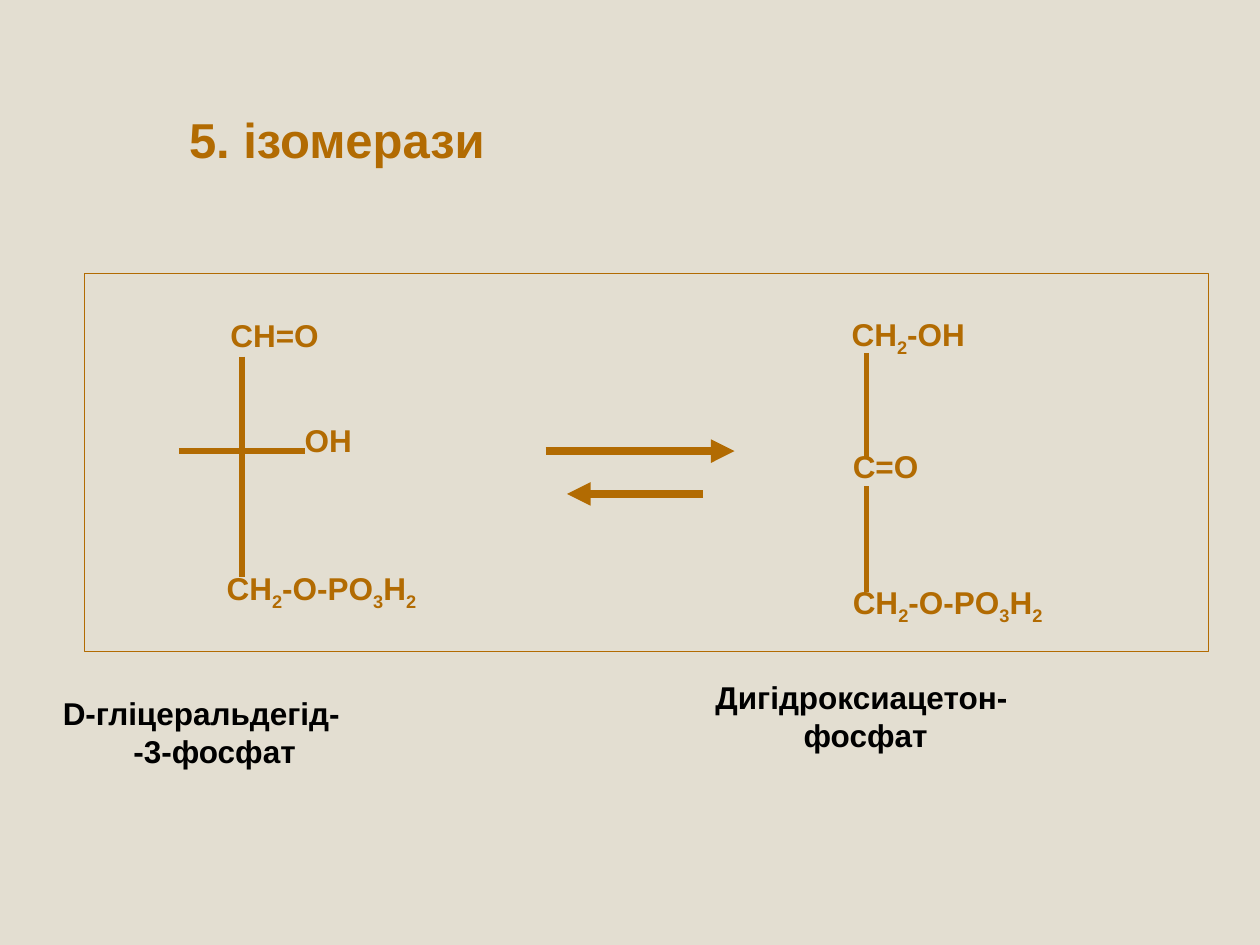
"""Build the slide on isomerases with its reversible reaction scheme."""
from dataclasses import dataclass
from itertools import groupby

from lxml import etree
from pptx import Presentation
from pptx.dml.color import RGBColor
from pptx.enum.shapes import MSO_CONNECTOR, MSO_SHAPE
from pptx.enum.text import MSO_ANCHOR, MSO_AUTO_SIZE, PP_ALIGN
from pptx.oxml.ns import qn
from pptx.util import Inches, Pt

STRAIGHT = MSO_CONNECTOR.STRAIGHT
RECTANGLE = MSO_SHAPE.RECTANGLE
TOP = MSO_ANCHOR.TOP
NO_AUTOFIT = MSO_AUTO_SIZE.NONE
LEFT = PP_ALIGN.LEFT

FONT = "Arial"
BACKGROUND = "E3DED1"
ACCENT = "B26B02"
BLACK = "000000"
TITLE_SIZE = 28
TEXT_SIZE = 18
BOND_WIDTH = 3
ARROW_WIDTH = 4.5
LEFT_CHAIN = 1.92
RIGHT_CHAIN = 6.88


@dataclass(frozen=True)
class Group:
    formula: str
    left: float
    top: float
    width: float


@dataclass(frozen=True)
class Line:
    x1: float
    y1: float
    x2: float
    y2: float
    is_arrow: bool = False


@dataclass(frozen=True)
class Caption:
    first: str
    second: str
    left: float
    top: float
    indent: float


GROUPS = (
    Group("CH=O", 1.73, 2.46, 1.14),
    Group("OH", 2.32, 3.29, 0.7),
    Group("CH2-O-PO3H2", 1.7, 4.47, 2.26),
    Group("CH2-OH", 6.66, 2.45, 1.42),
    Group("C=O", 6.67, 3.5, 0.9),
    Group("CH2-O-PO3H2", 6.67, 4.58, 2.26),
)
LINES = (
    Line(LEFT_CHAIN, 2.83, LEFT_CHAIN, 4.58),
    Line(LEFT_CHAIN - 0.5, 3.58, LEFT_CHAIN + 0.5, 3.58),
    Line(RIGHT_CHAIN, 2.8, RIGHT_CHAIN, 3.64),
    Line(RIGHT_CHAIN, 3.86, RIGHT_CHAIN, 4.7),
    Line(4.33, 3.58, 5.83, 3.58, True),
    Line(5.58, 3.92, 4.5, 3.92, True),
)
CAPTIONS = (
    Caption("D-гліцеральдегід-", "-3-фосфат", 0.4, 5.46, 0.56),
    Caption("Дигідроксиацетон-", "фосфат", 5.58, 5.33, 0.7),
)


def rgb(value: str) -> RGBColor:
    """Turn a hex string into a colour."""
    return RGBColor.from_string(value)


def add_span(para, text: str, size: float, color: str):
    """Add one bold run to a paragraph."""
    span = para.add_run()
    span.text = text
    span.font.name = FONT
    span.font.size = Pt(size)
    span.font.bold = True
    span.font.color.rgb = rgb(color)
    return span


def add_box(page, left: float, top: float, width: float, height: float):
    """Add a wrapping text box and return its text frame."""
    box = page.shapes.add_textbox(
        Inches(left), Inches(top), Inches(width), Inches(height))
    box.text_frame.word_wrap = True
    return box.text_frame


def write_title(page, text: str) -> None:
    """Place and format the title placeholder."""
    title = page.shapes.title
    title.left, title.top = Inches(1.4), Inches(0.82)
    title.width, title.height = Inches(2.7), Inches(0.57)
    frame = title.text_frame
    frame.word_wrap = True
    frame.auto_size = NO_AUTOFIT
    frame.vertical_anchor = TOP
    para = frame.paragraphs[0]
    para.alignment = LEFT
    add_span(para, text, TITLE_SIZE, ACCENT)


def draw_group(page, group: Group) -> None:
    """Write a chemical group with its digits as subscripts."""
    frame = add_box(page, group.left, group.top, group.width, 0.5)
    for is_index, letters in groupby(group.formula, str.isdigit):
        span = add_span(frame.paragraphs[0], "".join(letters), TEXT_SIZE, ACCENT)
        if is_index:
            span.font._element.set("baseline", "-25000")


def draw_line(page, line: Line) -> None:
    """Draw a bond or a reaction arrow."""
    connector = page.shapes.add_connector(
        STRAIGHT, Inches(line.x1), Inches(line.y1), Inches(line.x2), Inches(line.y2))
    connector.line.color.rgb = rgb(ACCENT)
    connector.line.width = Pt(ARROW_WIDTH if line.is_arrow else BOND_WIDTH)
    if line.is_arrow:
        outline = connector.line._get_or_add_ln()
        etree.SubElement(outline, qn("a:tailEnd"), type="triangle")
    etree.SubElement(connector._element.spPr, qn("a:effectLst"))


def draw_caption(page, caption: Caption) -> None:
    """Write a two-line compound name with an indented second line."""
    frame = add_box(page, caption.left, caption.top, 3.3, 0.91)
    add_span(frame.paragraphs[0], caption.first, TEXT_SIZE, BLACK)
    para = frame.add_paragraph()
    para._p.get_or_add_pPr().set("marL", str(Inches(caption.indent)))
    add_span(para, caption.second, TEXT_SIZE, BLACK)


def draw_frame(page) -> None:
    """Outline the reaction scheme."""
    frame = page.shapes.add_shape(
        RECTANGLE, Inches(0.67), Inches(2.17), Inches(8.92), Inches(3))
    frame.shadow.inherit = False
    frame.fill.background()
    frame.line.color.rgb = rgb(ACCENT)
    frame.line.width = Pt(0.75)


def main() -> None:
    """Build and save the deck."""
    deck = Presentation()
    deck.slide_width, deck.slide_height = Inches(10), Inches(7.5)
    page = deck.slides.add_slide(deck.slide_layouts[5])
    page.background.fill.solid()
    page.background.fill.fore_color.rgb = rgb(BACKGROUND)
    write_title(page, "5. ізомерази")
    for group in GROUPS:
        draw_group(page, group)
    for line in LINES:
        draw_line(page, line)
    for caption in CAPTIONS:
        draw_caption(page, caption)
    draw_frame(page)
    deck.save("out.pptx")


if __name__ == "__main__":
    main()
